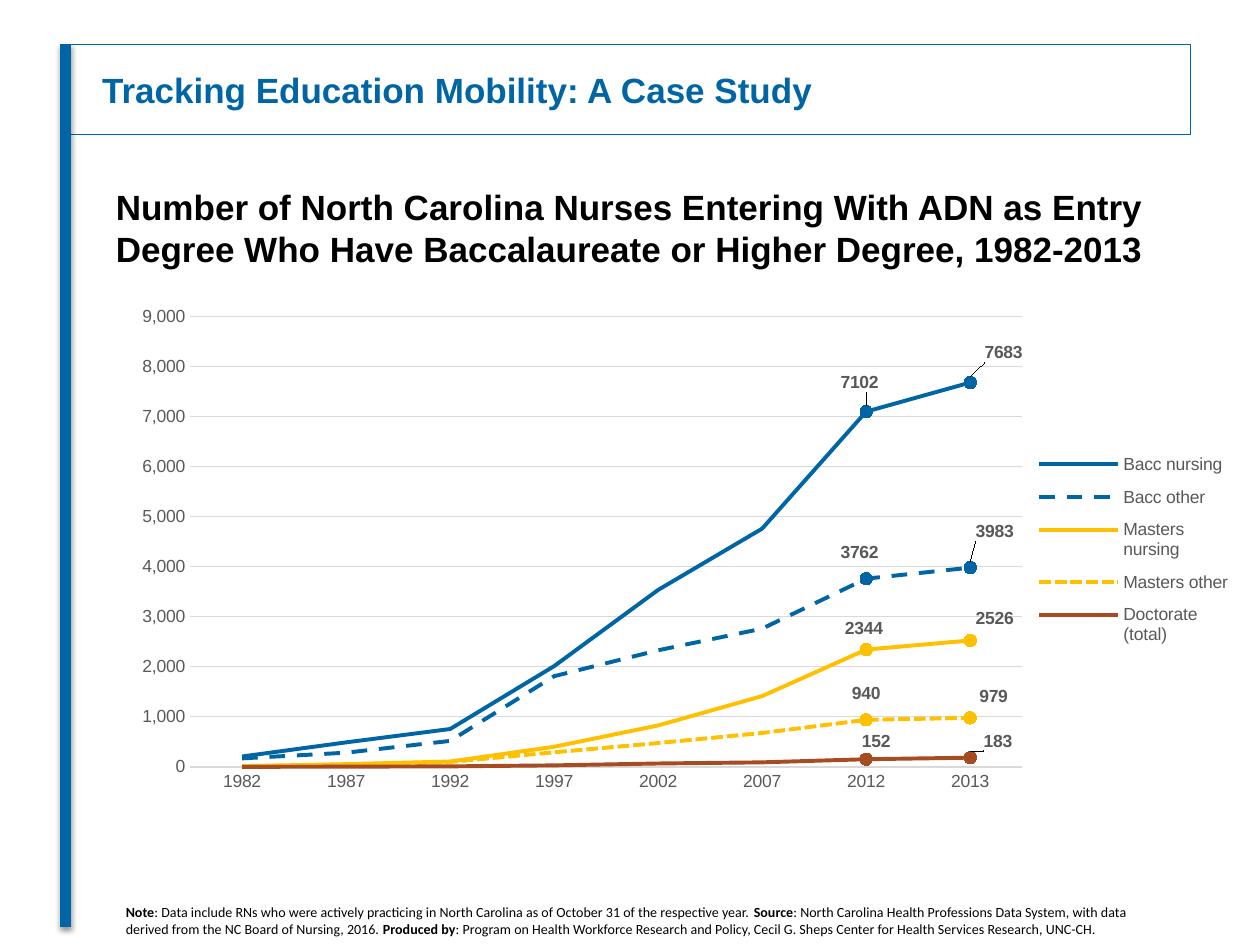
from lxml import etree
from pptx import Presentation
from pptx.chart.data import CategoryChartData
from pptx.dml.color import RGBColor
from pptx.enum.chart import (XL_CHART_TYPE as Kind, XL_LABEL_POSITION as Spot,
                             XL_LEGEND_POSITION as Side, XL_MARKER_STYLE as Mark,
                             XL_TICK_MARK as Tick)
from pptx.enum.dml import MSO_LINE as Dash
from pptx.enum.shapes import MSO_CONNECTOR as Wire, MSO_SHAPE as Form
from pptx.enum.text import MSO_ANCHOR as Anchor, PP_ALIGN as Align
from pptx.oxml import parse_xml
from pptx.oxml.ns import nsdecls, qn
from pptx.util import Inches, Pt

WIDE, HIGH = Inches(10), Inches(7.5)
BLUE, GOLD, RUST = "0065A4", "FFC000", "A74B22"
GREY, PALE, BLACK = "595959", "D9D9D9", "000000"

YEARS = ["1982", "1987", "1992", "1997", "2002", "2007", "2012", "2013"]
# Name, colour, dash, values, label shifts for the last two years (% of chart)
DEGREES = [
    ("Bacc nursing", BLUE, Dash.SOLID,
     [207, 489, 756, 2014, 3537, 4763, 7102, 7683], [(-0.6, -1.4), (3, -1.6)]),
    ("Bacc other", BLUE, Dash.DASH,
     [169, 283, 518, 1812, 2330, 2762, 3762, 3983], [(-0.6, -1), (2.2, -2.8)]),
    ("Masters nursing", GOLD, Dash.SOLID,
     [13, 54, 107, 401, 828, 1414, 2344, 2526], [(-0.2, 0), (2.2, -0.2)]),
    ("Masters other", GOLD, Dash.SQUARE_DOT,
     [15, 40, 98, 291, 476, 677, 940, 979], [(0, -1), (2.1, 0)]),
    ("Doctorate (total)", RUST, Dash.SOLID,
     [0, 3, 9, 29, 67, 90, 152, 183], [(0.9, 0.6), (2.5, 0.8)]),
]
NOTE = [
    ("Note", True),
    (": Data include RNs who were actively practicing in North Carolina "
     "as of October 31 of the respective year. ", False),
    ("Source", True),
    (": North Carolina Health Professions Data System, with data ", False),
    None,
    ("derived from the NC Board of Nursing, 2016. ", False),
    ("Produced by", True),
    (": Program on Health Workforce Research and Policy, Cecil G. Sheps Center "
     "for Health Services Research, UNC-CH.", False),
]


def hue(code):
    return RGBColor.from_string(code)


def area(x, y, w, h):
    """Turn percentages of the slide into lengths."""
    return [int(part * size / 100)
            for part, size in zip((x, y, w, h), (WIDE, HIGH) * 2)]


def style(font, size, color, bold=None, face="Arial"):
    font.name, font.size, font.bold = face, Pt(size), bold
    font.color.rgb = hue(color)


def stroke(line, color, width):
    line.color.rgb = hue(color)
    line.width = Pt(width)


def add_frame(slide):
    # Thin box around the title
    box = slide.shapes.add_shape(Form.RECTANGLE, *area(5, 4.67, 89.5, 9.6))
    box.shadow.inherit = False
    box.fill.background()
    stroke(box.line, BLUE, 0.75)
    # Thick bar down the left side, with a soft shadow
    x, top, _, end = area(5.2, 4.67, 0, 98.13)
    bar = slide.shapes.add_connector(Wire.STRAIGHT, x, top, x, end)
    stroke(bar.line, BLUE, 6)
    bar._element.spPr.append(parse_xml(
        f'<a:effectLst {nsdecls("a")}><a:outerShdw blurRad="{Pt(3.1)}" '
        f'dist="{Pt(1.6)}" dir="5400000" rotWithShape="0"><a:srgbClr val="{BLACK}">'
        '<a:alpha val="38000"/></a:srgbClr></a:outerShdw></a:effectLst>'))


def set_title(slide, text):
    title = slide.shapes.title
    title.left, title.top, title.width, title.height = area(7.1, 4.67, 87.9, 9.6)
    frame = title.text_frame
    frame.text = text
    frame.vertical_anchor = Anchor.MIDDLE
    frame.paragraphs[0].alignment = Align.LEFT
    style(frame.paragraphs[0].font, 20, BLUE, True)


def add_box(slide, *place):
    frame = slide.shapes.add_textbox(*area(*place)).text_frame
    frame.word_wrap = True
    return frame


def add_head(slide, text):
    frame = add_box(slide, 1.9, 18.93, 96.1, 10.27)
    frame.text = text
    for para in frame.paragraphs:
        para.alignment = Align.CENTER
        style(para.font, 20, BLACK, True)


def add_note(slide, parts):
    para = add_box(slide, 9, 94.93, 86.4, 4.93).paragraphs[0]
    style(para.font, 8, BLACK, face="Calibri")
    for part in parts:
        if part is None:
            para.add_line_break()
        else:
            run = para.add_run()
            run.text, run.font.bold = part


def layout(inner=False, **shares):
    """Make a manual chart layout from percentages."""
    node = etree.Element(qn("c:layout"))
    manual = etree.SubElement(node, qn("c:manualLayout"))
    if inner:
        etree.SubElement(manual, qn("c:layoutTarget"), val="inner")
    if "w" in shares:
        for mode in ("xMode", "yMode"):
            etree.SubElement(manual, qn("c:" + mode), val="edge")
    for key, share in shares.items():
        etree.SubElement(manual, qn("c:" + key), val=str(share / 100))
    return node


def place(parent, node, index):
    for old in parent.findall(qn("c:layout")):
        parent.remove(old)
    parent.insert(index, node)


def style_line(series, color, dash, shifts):
    series.smooth = False
    stroke(series.format.line, color, 2.25)
    series.format.line.dash_style = dash
    series.marker.style = Mark.NONE
    series.data_labels.show_value = False
    # Dots and labels on the last two years only
    first = len(YEARS) - len(shifts)
    for index, (x, y) in enumerate(shifts, first):
        point = series.points[index]
        stroke(point.format.line, color, 2.25)
        point.format.line.dash_style = dash
        point.marker.style, point.marker.size = Mark.CIRCLE, 7
        point.marker.format.fill.solid()
        point.marker.format.fill.fore_color.rgb = hue(color)
        point.marker.format.line.color.rgb = hue(color)
        label = point.data_label
        style(label.font, 10, GREY, True)
        label.position = Spot.ABOVE
        place(series.data_labels._element.findall(qn("c:dLbl"))[index - first],
              layout(x=x, y=y), 1)


def add_graph(slide):
    data = CategoryChartData()
    data.categories = YEARS
    for name, _, _, values, _ in DEGREES:
        data.add_series(name, values)
    chart = slide.shapes.add_chart(
        Kind.LINE, *area(9.7, 31.47, 88.3, 58.67), data).chart
    chart.has_title = False
    style(chart.font, 10, BLACK)
    chart.plots[0].vary_by_categories = False
    for series, (_, color, dash, _, shifts) in zip(chart.plots[0].series, DEGREES):
        style_line(series, color, dash, shifts)

    # Axes
    years, count = chart.category_axis, chart.value_axis
    for axis in (years, count):
        axis.major_tick_mark = axis.minor_tick_mark = Tick.NONE
        style(axis.tick_labels.font, 10, GREY)
    stroke(years.format.line, PALE, 0.75)
    count.format.line.fill.background()
    stroke(count.major_gridlines.format.line, PALE, 0.75)
    count.minimum_scale, count.maximum_scale, count.major_unit = 0, 9000, 1000
    count.tick_labels.number_format = "#,##0"
    count.tick_labels.number_format_is_linked = False

    # Legend and plot area
    chart.has_legend = True
    legend = chart.legend
    legend.position, legend.include_in_layout = Side.BOTTOM, False
    style(legend.font, 10, GREY)
    place(legend._element, layout(x=81.8, y=26, w=18.2, h=39), 1)
    place(chart._chartSpace.chart.plotArea,
          layout(True, x=6.1, y=3.5, w=74.8, h=81.2), 0)


def main():
    deck = Presentation()
    deck.slide_width, deck.slide_height = WIDE, HIGH
    slide = deck.slides.add_slide(deck.slide_layouts[5])
    add_frame(slide)
    set_title(slide, "Tracking Education Mobility: A Case Study")
    add_head(slide, "Number of North Carolina Nurses Entering With ADN as Entry\n"
                    "Degree Who Have Baccalaureate or Higher Degree, 1982-2013")
    add_note(slide, NOTE)
    add_graph(slide)
    deck.save("out.pptx")


if __name__ == "__main__":
    main()
